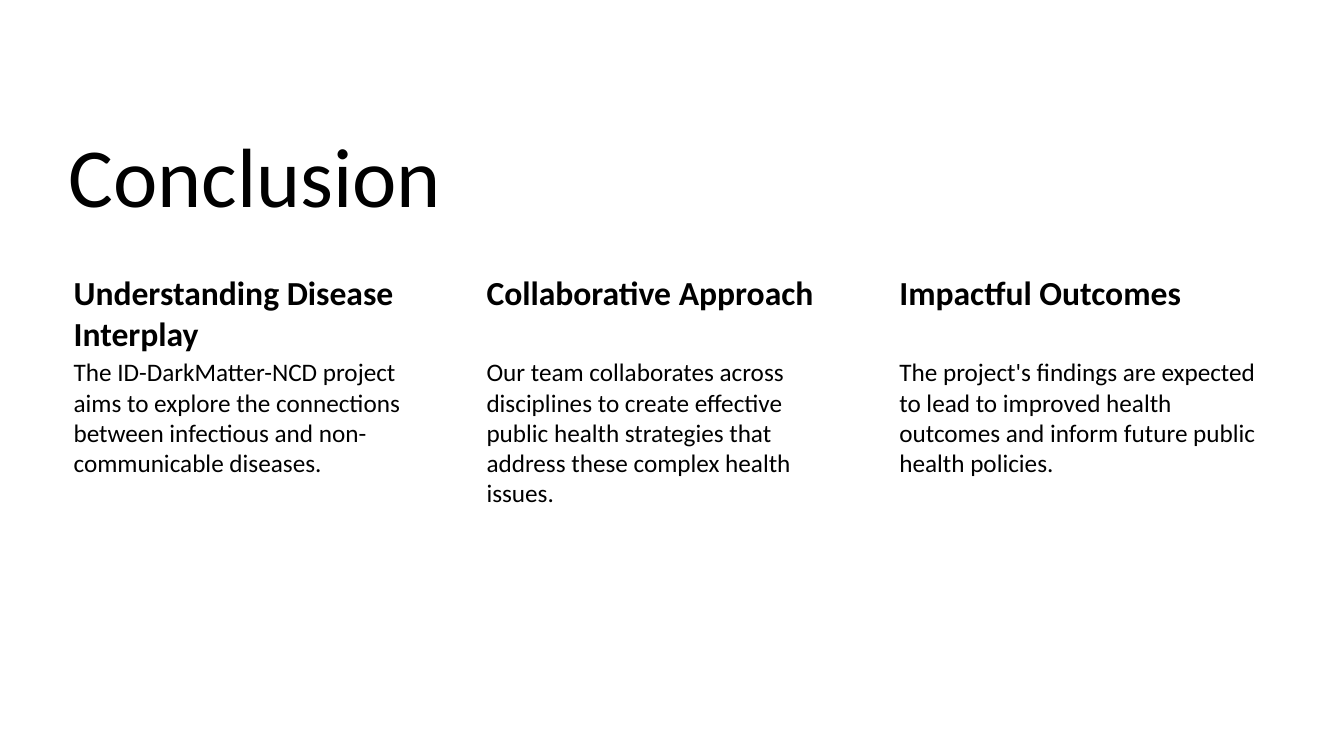
from dataclasses import dataclass

from pptx import Presentation, util as u
from pptx.dml.color import RGBColor
from pptx.enum import text as t


@dataclass(frozen=True)
class Theme:
    font: str = "Calibri"
    ink: str = "000000"
    title: int = 60
    head: int = 24
    body: int = 18


@dataclass(frozen=True)
class Box:
    left: float
    top: float
    width: float
    height: float


@dataclass(frozen=True)
class Point:
    head: str
    body: str


@dataclass(frozen=True)
class Grid:
    left: float = 0.58
    step: float = 4.095
    width: float = 3.72
    top: float = 2.67
    split: float = 3.51
    end: float = 5.41

    def head(self, col: int) -> Box:
        return Box(self.left + col * self.step, self.top, self.width, self.split - self.top)

    def body(self, col: int) -> Box:
        return Box(self.left + col * self.step, self.split, self.width, self.end - self.split)


THEME = Theme()
GRID = Grid()
TITLE = Box(GRID.left, 0.24, 8.87, 2.05)
INSET = (0.15, 0.03, 0.03, 0.03)
POINTS = (
    Point(
        "Understanding Disease Interplay",
        "The ID-DarkMatter-NCD project aims to explore the connections "
        "between infectious and non-communicable diseases.",
    ),
    Point(
        "Collaborative Approach",
        "Our team collaborates across disciplines to create effective public "
        "health strategies that address these complex health issues.",
    ),
    Point(
        "Impactful Outcomes",
        "The project's findings are expected to lead to improved health "
        "outcomes and inform future public health policies.",
    ),
)


def write(slide, words: str, box: Box, *, size: int, bold: bool = False,
          inset: tuple[float, ...] = INSET, line: float = 1.0,
          anchor: t.MSO_ANCHOR = t.MSO_ANCHOR.TOP) -> None:
    area = (u.Inches(n) for n in (box.left, box.top, box.width, box.height))
    frame = slide.shapes.add_textbox(*area).text_frame
    frame.word_wrap = True
    frame.vertical_anchor = anchor
    (frame.margin_left, frame.margin_top,
     frame.margin_right, frame.margin_bottom) = (u.Inches(n) for n in inset)
    para = frame.paragraphs[0]
    para.line_spacing = line
    run = para.add_run()
    run.text = words
    run.font.name = THEME.font
    run.font.size = u.Pt(size)
    run.font.bold = bold
    run.font.color.rgb = RGBColor.from_string(THEME.ink)


def main() -> None:
    deck = Presentation()
    deck.slide_width = u.Inches(13.33)
    deck.slide_height = u.Inches(7.5)
    slide = deck.slides.add_slide(deck.slide_layouts[6])
    write(slide, "Conclusion", TITLE, size=THEME.title, line=0.9,
          inset=(0.1, 0.05, 0.1, 0.05), anchor=t.MSO_ANCHOR.BOTTOM)
    for col, point in enumerate(POINTS):
        write(slide, point.head, GRID.head(col), size=THEME.head, bold=True)
        write(slide, point.body, GRID.body(col), size=THEME.body)
    deck.save("out.pptx")


if __name__ == "__main__":
    main()
